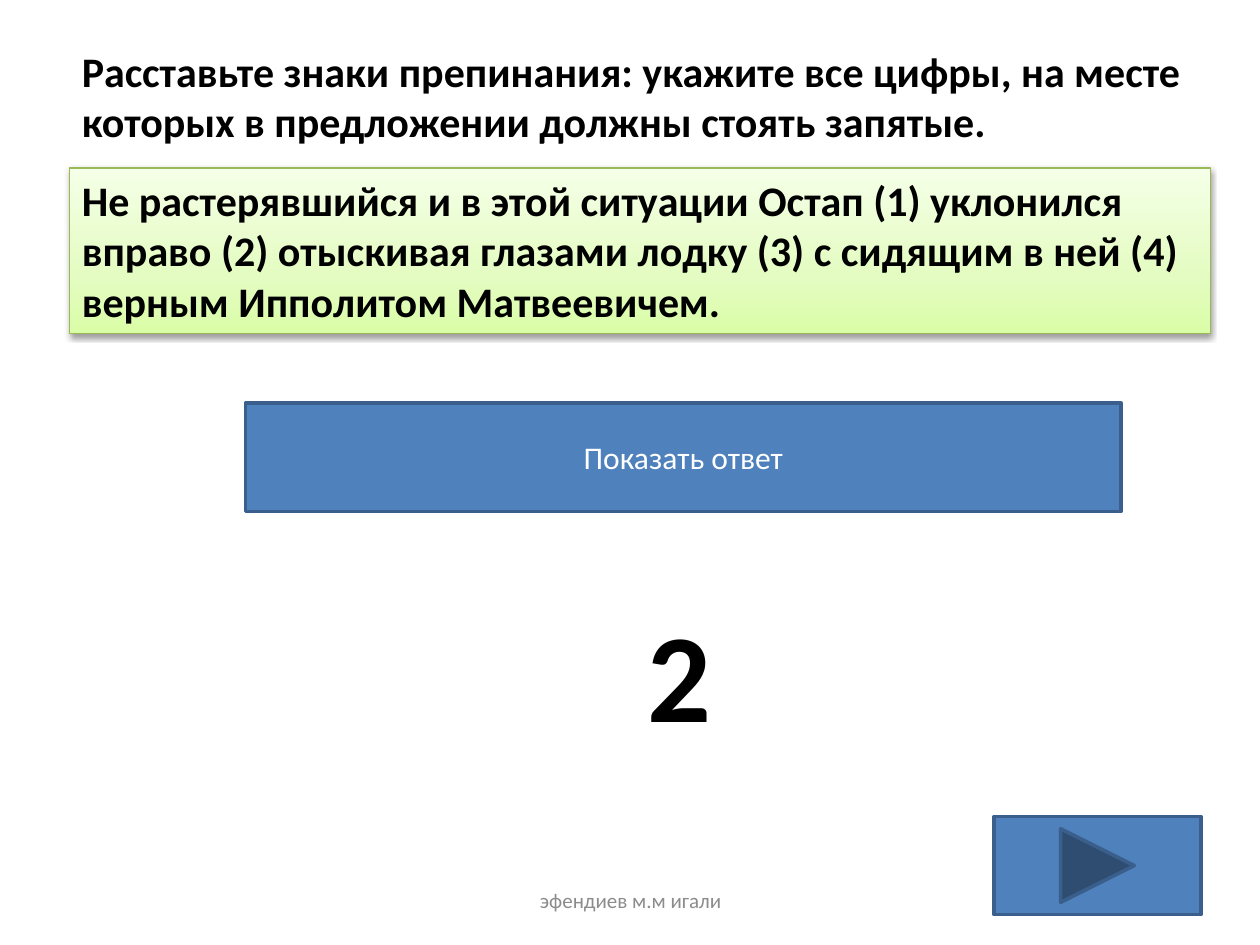
from copy import deepcopy

from lxml import etree
from pptx import Presentation
from pptx.dml.color import RGBColor
from pptx.enum.shapes import MSO_SHAPE
from pptx.enum.text import MSO_ANCHOR, PP_ALIGN
from pptx.oxml.ns import qn
from pptx.util import Cm, Pt

RECTANGLE = MSO_SHAPE.RECTANGLE
BLANK_BUTTON = MSO_SHAPE.ACTION_BUTTON_CUSTOM
NEXT_BUTTON = MSO_SHAPE.ACTION_BUTTON_FORWARD_OR_NEXT
TOP, MIDDLE = MSO_ANCHOR.TOP, MSO_ANCHOR.MIDDLE
LEFT, CENTER = PP_ALIGN.LEFT, PP_ALIGN.CENTER

TASK = "Расставьте знаки препинания: укажите все цифры, на месте которых в предложении должны стоять запятые."
SENTENCE = (
    "Не растерявшийся и в этой ситуации Остап (1) уклонился вправо (2) отыскивая глазами "
    "лодку (3) с сидящим в ней (4) верным Ипполитом Матвеевичем."
)
BODY_FORMAT = {"size": Pt(24), "bold": True}
BUTTON_FORMAT = {"size": Pt(18), "bold": False}
ANSWER_FORMAT = {"size": Pt(72), "bold": True}
FOOTER_FORMAT = {"size": Pt(12), "bold": False}
GRADIENT_STOPS = ((0, "DAFDA7"), (0.35, "E4FCC2"), (1, "F5FFE7"))


def color(value):
    """Turn a hex string into a colour."""
    return RGBColor.from_string(value)


def write_text(shape, text, font_format, font_color="000000", alignment=LEFT, anchor=TOP):
    """Write one formatted paragraph into a shape."""
    frame = shape.text_frame
    frame.word_wrap = True
    frame.vertical_anchor = anchor
    paragraph = frame.paragraphs[0]
    paragraph.alignment = alignment
    run = paragraph.add_run()
    run.text = text
    run.font.color.rgb = color(font_color)
    for name, value in {"name": "Calibri", **font_format}.items():
        setattr(run.font, name, value)


def add_label(slide, box, text, font_format, **options):
    """Add a text box in the given box."""
    shape = slide.shapes.add_textbox(*map(Cm, box))
    write_text(shape, text, font_format, **options)


def add_outlined(slide, box, preset, line_color, line_width):
    """Add a preset shape with an outline and no theme shadow."""
    shape = slide.shapes.add_shape(preset, *map(Cm, box))
    shape.shadow.inherit = False
    shape.line.color.rgb = color(line_color)
    shape.line.width = Pt(line_width)
    return shape


def fill_gradient(shape):
    """Fill a shape with the green gradient, running upwards."""
    shape.fill.gradient()
    shape.fill.gradient_angle = 90
    stop_list = next(shape._element.iter(qn("a:gsLst")))
    stop_list.append(deepcopy(stop_list[0]))
    for stop, (position, value) in zip(shape.fill.gradient_stops, GRADIENT_STOPS):
        stop.position = position
        stop.color.rgb = color(value)


def add_soft_shadow(shape):
    """Give a shape a soft shadow below it."""
    effects = shape._element.spPr.find(qn("a:effectLst"))
    shadow = etree.SubElement(
        effects, qn("a:outerShdw"), blurRad="40000", dist="20000", dir="5400000", rotWithShape="0"
    )
    tint = etree.SubElement(shadow, qn("a:srgbClr"), val="000000")
    etree.SubElement(tint, qn("a:alpha"), val="38000")


def add_question(slide, left, top, width):
    """Add the task and, below it, the sentence on a green panel."""
    add_label(slide, (left, top, width, 2.31), TASK, BODY_FORMAT)
    panel = add_outlined(slide, (left, top + 2.6, width, 3.33), RECTANGLE, "98B955", 0.75)
    fill_gradient(panel)
    add_soft_shadow(panel)
    write_text(panel, SENTENCE, BODY_FORMAT)


def add_button(slide, box, preset):
    """Add a blue action button."""
    button = add_outlined(slide, box, preset, "3A5F8C", 2)
    button.fill.solid()
    button.fill.fore_color.rgb = color("4F81BD")
    return button


def add_answer(slide, left, top, width):
    """Add the answer button and, below it, the answer."""
    button = add_button(slide, (left, top, width, 2.18), BLANK_BUTTON)
    write_text(button, "Показать ответ", BUTTON_FORMAT, "FFFFFF", CENTER, MIDDLE)
    add_label(slide, (left, top + 3.78, width - 0.17, 3.33), "2", ANSWER_FORMAT, alignment=CENTER)


def add_footer(slide, left, top):
    """Add the footer name and the button to the next slide."""
    add_label(
        slide, (left, top, 8.05, 1.01), "эфендиев м.м игали", FOOTER_FORMAT,
        font_color="8C8C8C", alignment=CENTER, anchor=MIDDLE,
    )
    add_button(slide, (left + 11.35, top - 1.19, 4.17, 1.98), NEXT_BUTTON)


def main():
    """Build and save the slide."""
    presentation = Presentation()
    presentation.slide_width = Cm(25.4)
    presentation.slide_height = Cm(19.05)
    slide = presentation.slides.add_slide(presentation.slide_layouts[6])
    add_question(slide, 1.4, 0.79, 23.01)
    add_answer(slide, 4.95, 8.13, 17.65)
    add_footer(slide, 8.69, 17.65)
    presentation.save("out.pptx")


if __name__ == "__main__":
    main()
